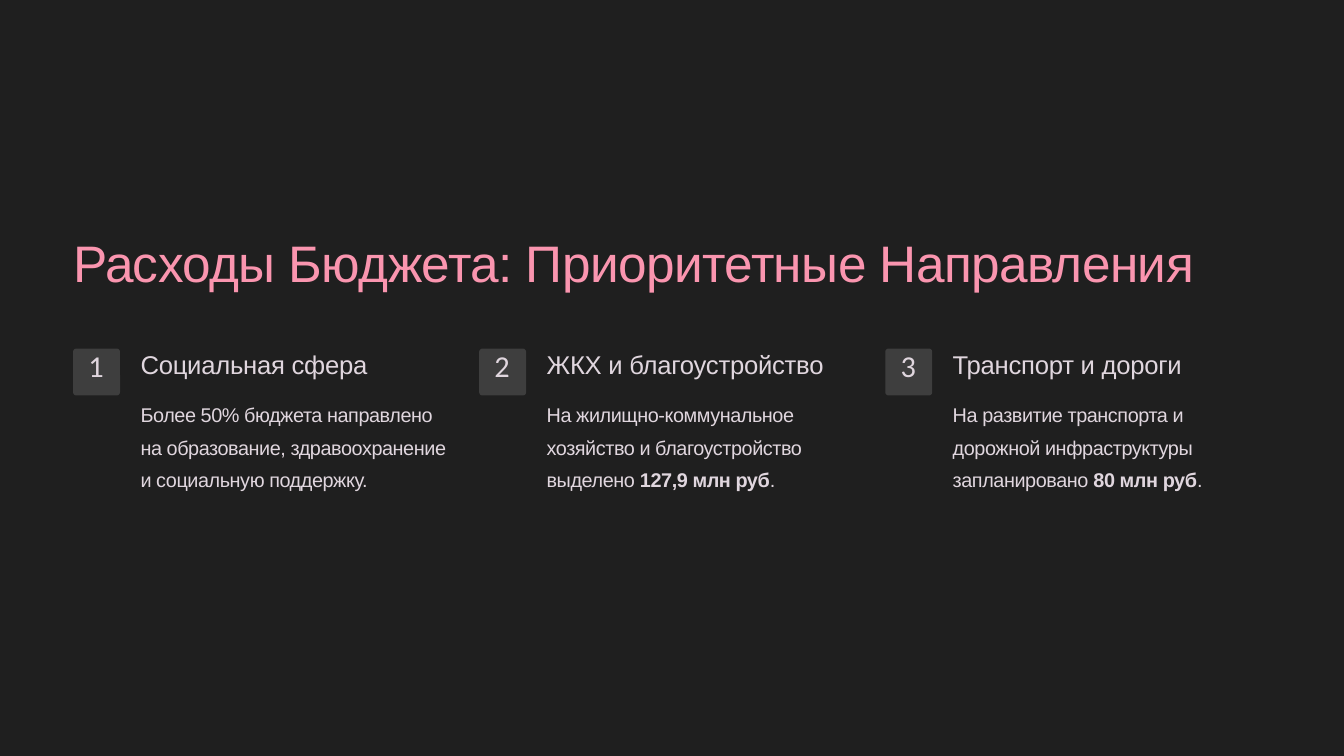
"""Build a slide with three numbered budget spending priorities."""
from pptx import Presentation
from pptx.dml.color import RGBColor
from pptx.enum.shapes import MSO_SHAPE as SHAPE
from pptx.enum.text import MSO_ANCHOR as ANCHOR, MSO_AUTO_SIZE as AUTO, PP_ALIGN as ALIGN
from pptx.util import Cm, Pt

COLORS = {"background": "1F1F1F", "badge": "3E3E3E", "title": "FA95AF", "text": "E0D6DE"}
STYLES = {
    "title": {"font": "Arial", "size": 44, "line": 55, "spc": -50, "color": "title"},
    "number": {"font": "Calibri", "size": 26, "line": 26, "spc": -30, "color": "text"},
    "heading": {"font": "Arial", "size": 22, "line": 27, "spc": -20, "color": "text"},
    "body": {"font": "Arial", "size": 17, "line": 28, "spc": -40, "color": "text"},
}
LEFT, TOP, STEP, BADGE = 2.21, 10.54, 12.28, 1.42
PRIORITIES = [
    ("Социальная сфера", 6.88,
     [("Более 50% бюджета направлено на образование, здравоохранение "
       "и социальную поддержку.", False)]),
    ("ЖКХ и благоустройство", 8.74,
     [("На жилищно-коммунальное хозяйство и благоустройство выделено ", False),
      ("127,9 млн руб", True), (".", False)]),
    ("Транспорт и дороги", 7.21,
     [("На развитие транспорта и дорожной инфраструктуры запланировано ", False),
      ("80 млн руб", True), (".", False)]),
]


def color(name):
    return RGBColor.from_string(COLORS[name])


def write_text(sp, runs, style, align=ALIGN.LEFT, wrap=False):
    look = STYLES[style]
    tf = sp.text_frame
    frame = {"margin_left": 0, "margin_top": 0, "margin_right": 0, "margin_bottom": 0,
             "word_wrap": wrap, "auto_size": AUTO.SHAPE_TO_FIT_TEXT,
             "vertical_anchor": ANCHOR.TOP}
    for name, value in frame.items():
        setattr(tf, name, value)
    p = tf.paragraphs[0]
    p.alignment, p.line_spacing = align, Pt(look["line"])
    for text, bold in runs:
        r = p.add_run()
        r.text = text
        for name, value in {"name": look["font"], "size": Pt(look["size"]), "bold": bold}.items():
            setattr(r.font, name, value)
        r.font.color.rgb = color(look["color"])
        r._r.get_or_add_rPr().set("spc", str(look["spc"]))


def add_title(s, text):
    sp = s.shapes.title
    box = {"left": LEFT, "top": 6.91, "width": 34.62, "height": 1.88}
    for name, value in box.items():
        setattr(sp, name, Cm(value))
    write_text(sp, [(text, False)], "title")


def add_text(s, x, y, w, h, runs, style, **layout):
    sp = s.shapes.add_textbox(Cm(x), Cm(y), Cm(w), Cm(h))
    write_text(sp, runs, style, **layout)


def add_badge(s, x, number):
    sp = s.shapes.add_shape(SHAPE.ROUNDED_RECTANGLE, Cm(x), Cm(TOP), Cm(BADGE), Cm(BADGE))
    sp.adjustments[0] = 0.07
    sp.shadow.inherit = False
    sp.fill.solid()
    sp.fill.fore_color.rgb = color("badge")
    sp.line.fill.background()
    add_text(s, x + 0.43, TOP + 0.13, 0.53, 0.94, [(str(number), False)], "number",
             align=ALIGN.CENTER)


def add_priority(s, index, heading, width, runs):
    x = LEFT + index * STEP
    add_badge(s, x, index + 1)
    add_text(s, x + 2.04, TOP, width, 0.94, [(heading, False)], "heading")
    add_text(s, x + 2.04, TOP + 1.37, 9.6, 2.9, runs, "body", wrap=True)


def main():
    prs = Presentation()
    prs.slide_width, prs.slide_height = Cm(40.64), Cm(22.86)
    s = prs.slides.add_slide(prs.slide_layouts[5])
    s.background.fill.solid()
    s.background.fill.fore_color.rgb = color("background")
    add_title(s, "Расходы Бюджета: Приоритетные Направления")
    for index, priority in enumerate(PRIORITIES):
        add_priority(s, index, *priority)
    prs.save("out.pptx")


if __name__ == "__main__":
    main()
